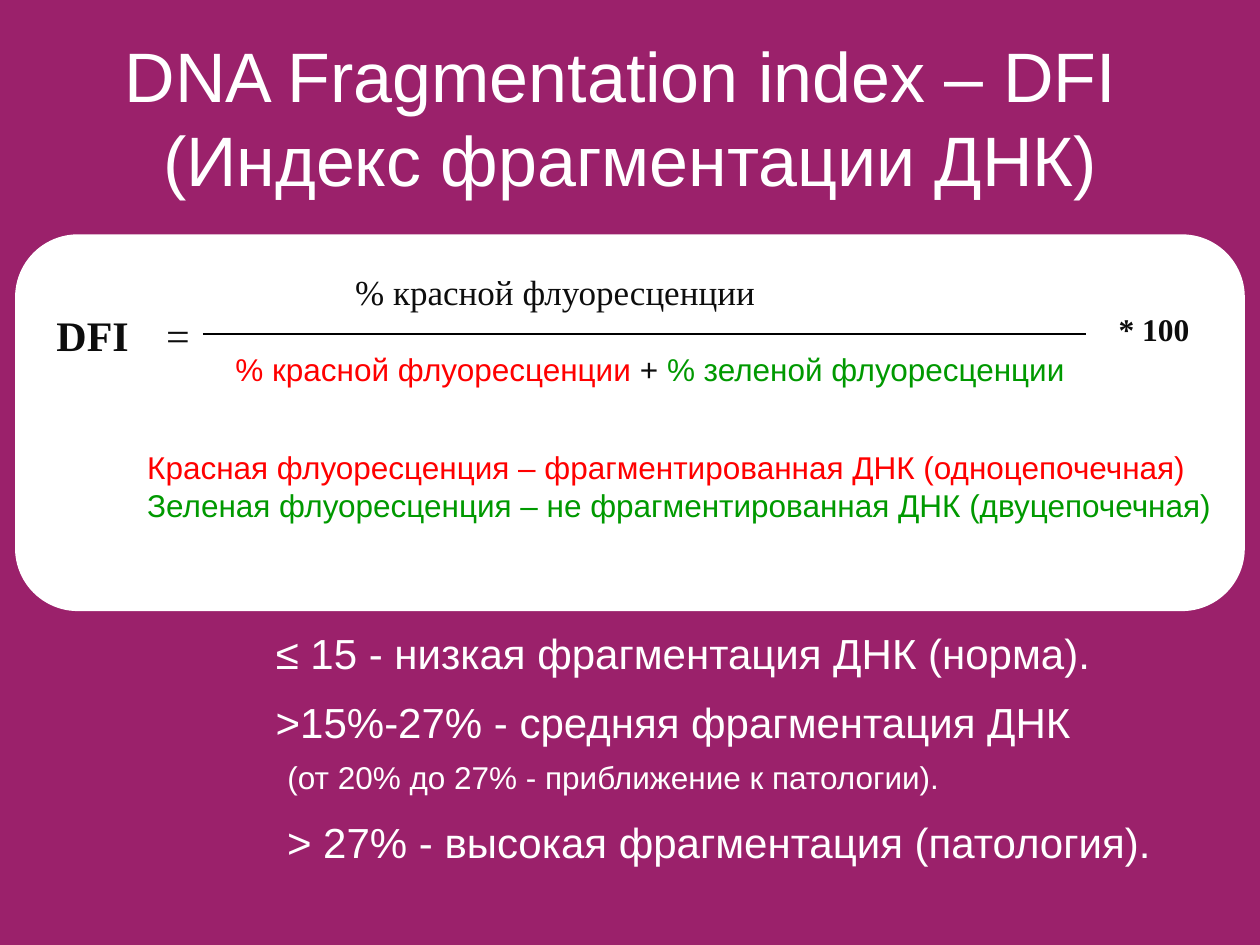
from lxml import etree
from pptx import Presentation
from pptx import util as u
from pptx.dml.color import RGBColor
from pptx.enum import shapes, text
from pptx.oxml.ns import qn

PX = 9144  # EMU per px, 100 px to the inch

PLUM = RGBColor(0x9B, 0x21, 0x6B)
WHITE = RGBColor(0xFF, 0xFF, 0xFF)
BLACK = RGBColor(0x00, 0x00, 0x00)
INK = RGBColor(0x0D, 0x0D, 0x0D)
RED = RGBColor(0xFF, 0x00, 0x00)
GREEN = RGBColor(0x00, 0x99, 0x00)

SANS = "Arial"
SERIF = "Times New Roman"
BREAK = None


class Painter:
    def __init__(self, slide, background):
        self.s = slide
        fill = slide.background.fill
        fill.solid()
        fill.fore_color.rgb = background

    def panel(self, box, color):
        sp = self.s.shapes.add_shape(
            shapes.MSO_SHAPE.ROUNDED_RECTANGLE, *(v * PX for v in box))
        sp.shadow.inherit = False
        sp.fill.solid()
        sp.fill.fore_color.rgb = color
        sp.line.fill.background()

    def line(self, start, end, color, width):
        ends = (v * PX for v in (*start, *end))
        cn = self.s.shapes.add_connector(shapes.MSO_CONNECTOR.STRAIGHT, *ends)
        cn.line.color.rgb = color
        cn.line.width = u.Pt(width)
        etree.SubElement(cn._element.spPr, qn("a:effectLst"))

    def text(self, box, paragraphs, size, color=WHITE, font=SANS, bold=False,
             wrap=True, align=text.PP_ALIGN.LEFT, anchor=text.MSO_ANCHOR.TOP):
        """Each paragraph lists runs: a string, BREAK, or (string, overrides)."""
        tf = self.s.shapes.add_textbox(*(v * PX for v in box)).text_frame
        tf.word_wrap = wrap
        tf.vertical_anchor = anchor
        for i, runs in enumerate(paragraphs):
            p = tf.add_paragraph() if i else tf.paragraphs[0]
            p.alignment = align
            for item in runs:
                if item is BREAK:
                    p.add_line_break()
                    continue
                words, own = (item, {}) if isinstance(item, str) else item
                r = p.add_run()
                r.text = words
                r.font.name = font
                r.font.bold = bold
                r.font.size = u.Pt(own.get("size", size))
                r.font.color.rgb = own.get("color", color)


def main():
    prs = Presentation()
    prs.slide_width, prs.slide_height = 1000 * PX, 750 * PX
    s = Painter(prs.slides.add_slide(prs.slide_layouts[6]), PLUM)

    s.panel((12, 186, 976, 299), WHITE)
    s.text((50, 30, 900, 125),
           [["DNA Fragmentation index – DFI ", BREAK,
             "(Индекс фрагментации ДНК)"]], 40,
           align=text.PP_ALIGN.CENTER, anchor=text.MSO_ANCHOR.MIDDLE)

    # Formula
    s.text((35, 241, 106, 50), [["DFI"]], 24, INK, SERIF, bold=True)
    s.text((122, 241, 39, 50), [["="]], 24, INK, SERIF, wrap=False)
    s.text((272, 210, 338, 44), [["% красной флуоресценции"]], 20, INK, SERIF,
           wrap=False)
    s.text((177, 273, 681, 41),
           [["% красной флуоресценции ", ("+ ", {"color": INK}),
             ("% зеленой флуоресценции", {"color": GREEN})]], 18, RED)
    s.line((161, 265), (862, 265), BLACK, 0.75)
    s.text((878, 241, 76, 40), [["* 100"]], 18, INK, SERIF, bold=True,
           wrap=False)

    # Colour key
    s.text((107, 351, 868, 70),
           [["Красная флуоресценция – фрагментированная ДНК (одноцепочечная)"],
            [("Зеленая флуоресценция – не фрагментированная ДНК "
              "(двуцепочечная)", {"color": GREEN})]], 18, RED, wrap=False)

    # Thresholds
    s.text((209, 493, 719, 50),
           [["≤ 15 - низкая фрагментация ДНК (норма)."]], 24)
    s.text((209, 548, 724, 90),
           [[">15%-27% - средняя фрагментация ДНК"],
            [" ", ("(от 20% до 27% - приближение к патологии).",
                   {"size": 18})]], 24)
    s.text((218, 643, 712, 51),
           [["> 27% - высокая фрагментация (патология)."]], 24, wrap=False)

    prs.save("out.pptx")


if __name__ == "__main__":
    main()
